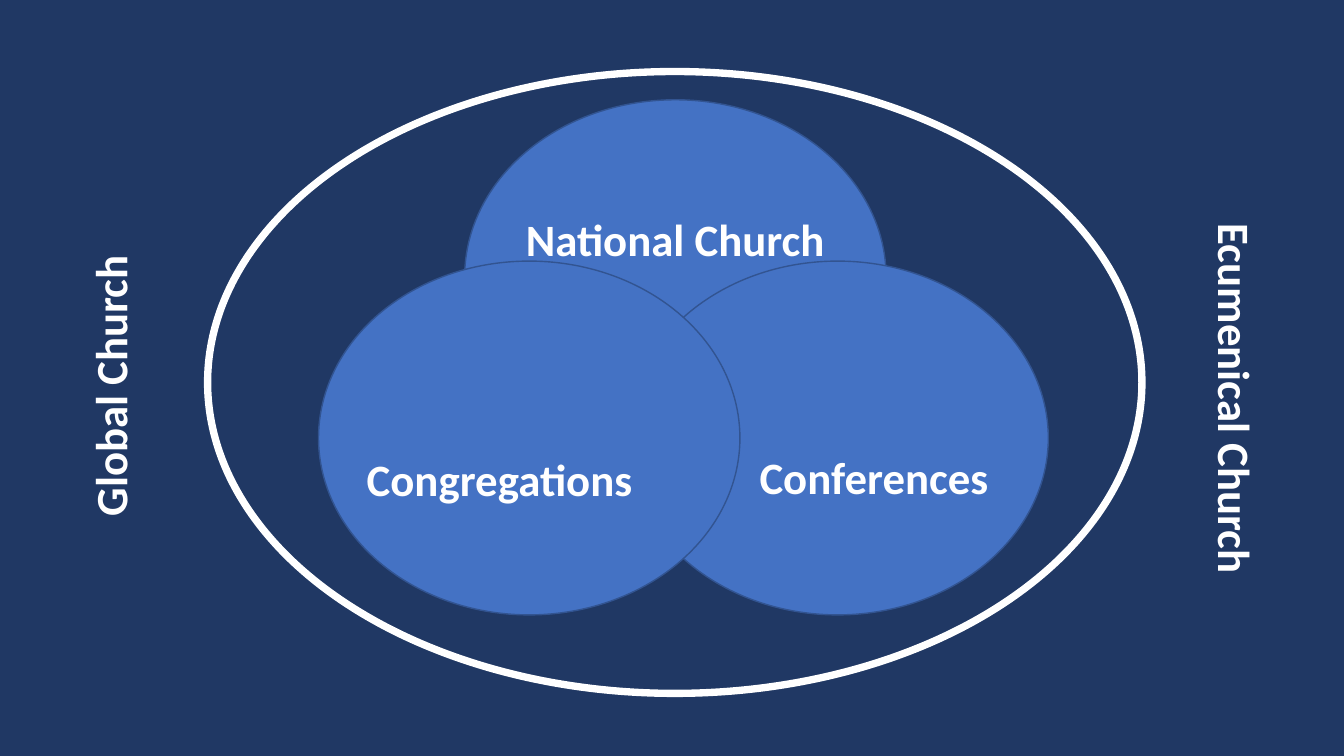
"""Build a slide of three overlapping church circles inside a wide ring."""
from dataclasses import dataclass
from typing import Optional

from pptx import Presentation
from pptx import util as u
from pptx.dml.color import RGBColor
from pptx.enum import shapes, text
from pptx.slide import Slide

NAVY = RGBColor(0x20, 0x38, 0x64)
BLUE = RGBColor(0x44, 0x72, 0xC4)
EDGE = RGBColor(0x32, 0x54, 0x91)
WHITE = RGBColor(0xFF, 0xFF, 0xFF)

LEFT = text.PP_ALIGN.LEFT
MID = text.PP_ALIGN.CENTER
FONT = {"name": "Calibri", "size": u.Pt(32), "bold": True}
FRAME = {"word_wrap": True, "auto_size": text.MSO_AUTO_SIZE.SHAPE_TO_FIT_TEXT}
TALL = 46


@dataclass
class Oval:
    left: float
    top: float
    width: float = 301
    height: float = 252.7
    fill: Optional[RGBColor] = BLUE
    edge: RGBColor = EDGE
    weight: float = 1


@dataclass
class Label:
    words: str
    left: float
    top: float
    width: float
    align: text.PP_ALIGN = LEFT
    turn: float = 0


CIRCLES = [Oval(331.9, 71.3), Oval(447.8, 186.5), Oval(227.5, 186.5)]
RING = Oval(148.3, 51.1, 667.4, 444.2, None, WHITE, 5.25)
INNER = [
    Label("National Church", 307.4, 147.6, 350, MID),
    Label("Congregations", 254.9, 319, 216),
    Label("Conferences", 535, 317.5, 178.6, MID),
]
OUTER = [
    Label("Global Church", -23.8, 250.6, 204.5, turn=270),
    Label("Ecumenical Church", 742.3, 270, 280.8, turn=90),
]


def apply(target: object, values: dict) -> None:
    for key, value in values.items():
        setattr(target, key, value)


def draw_oval(slide: Slide, oval: Oval) -> None:
    box = map(u.Pt, (oval.left, oval.top, oval.width, oval.height))
    shape = slide.shapes.add_shape(shapes.MSO_SHAPE.OVAL, *box)
    shape.shadow.inherit = False
    if oval.fill is None:
        shape.fill.background()
    else:
        shape.fill.solid()
        shape.fill.fore_color.rgb = oval.fill
    shape.line.color.rgb = oval.edge
    shape.line.width = u.Pt(oval.weight)


def draw_label(slide: Slide, label: Label) -> None:
    box = map(u.Pt, (label.left, label.top, label.width, TALL))
    shape = slide.shapes.add_textbox(*box)
    shape.rotation = label.turn
    apply(shape.text_frame, FRAME)
    para = shape.text_frame.paragraphs[0]
    para.alignment = label.align
    run = para.add_run()
    run.text = label.words
    apply(run.font, FONT)
    run.font.color.rgb = WHITE


def main() -> None:
    deck = Presentation()
    apply(deck, {"slide_width": u.Pt(960), "slide_height": u.Pt(540)})
    slide = deck.slides.add_slide(deck.slide_layouts[6])
    slide.background.fill.solid()
    slide.background.fill.fore_color.rgb = NAVY
    for circle in CIRCLES:
        draw_oval(slide, circle)
    for label in INNER:
        draw_label(slide, label)
    draw_oval(slide, RING)
    for label in OUTER:
        draw_label(slide, label)
    deck.save("out.pptx")


if __name__ == "__main__":
    main()
